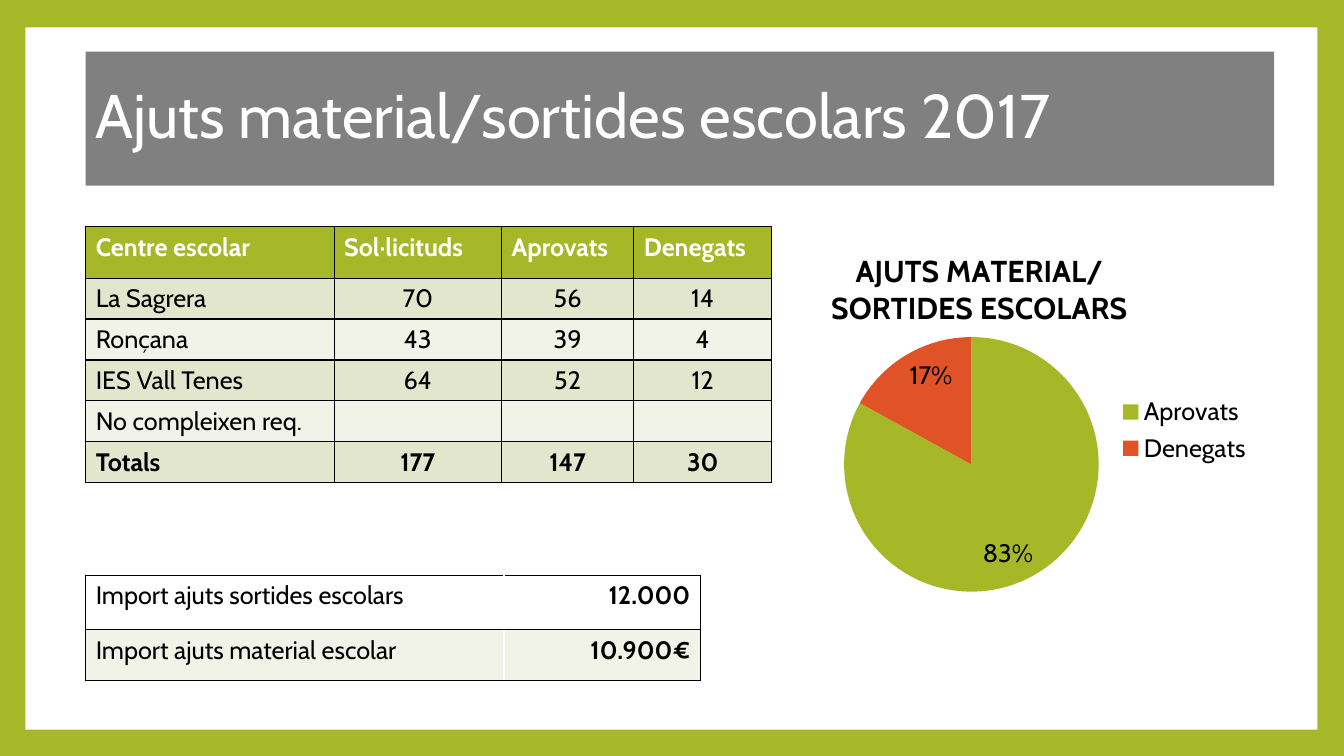
from lxml.etree import SubElement
from pptx import Presentation
from pptx.chart.data import CategoryChartData
from pptx.dml.color import RGBColor
from pptx.enum.chart import XL_CHART_TYPE, XL_LABEL_POSITION, XL_LEGEND_POSITION
from pptx.enum.shapes import MSO_SHAPE
from pptx.enum.text import MSO_ANCHOR, PP_ALIGN
from pptx.oxml import parse_xml
from pptx.oxml.ns import nsdecls, qn
from pptx.util import Cm, Pt

COLORS = {
    "green": "A6B727",
    "orange": "DF5327",
    "gray": "808080",
    "band": "E1E6CD",
    "light": "F1F3E8",
    "white": "FFFFFF",
    "black": "000000",
}


def rgb(name):
    return RGBColor.from_string(COLORS[name])


class SlideBuilder:
    font = "Cabin"

    def __init__(self, prs):
        self.slide = prs.slides.add_slide(prs.slide_layouts[6])

    def background(self, color):
        fill = self.slide.background.fill
        fill.solid()
        fill.fore_color.rgb = rgb(color)

    def style(self, font, color="black", size=18, bold=False):
        values = {"name": self.font, "size": Pt(size), "bold": bold}
        for key, value in values.items():
            setattr(font, key, value)
        font.color.rgb = rgb(color)

    def rect(self, box, color):
        sp = self.slide.shapes.add_shape(MSO_SHAPE.RECTANGLE, *map(Cm, box))
        sp.shadow.inherit = False
        sp.fill.solid()
        sp.fill.fore_color.rgb = rgb(color)
        sp.line.fill.background()
        return sp

    def banner(self, box, text):
        tf = self.rect(box, "gray").text_frame
        tf.word_wrap = True
        tf.vertical_anchor = MSO_ANCHOR.MIDDLE
        p = tf.paragraphs[0]
        p.alignment = PP_ALIGN.LEFT
        p.line_spacing = 0.9
        r = p.add_run()
        r.text = text
        self.style(r.font, "white", 44)

    def table(self, left, top, widths, heights):
        frame = self.slide.shapes.add_table(
            len(heights), len(widths), Cm(left), Cm(top),
            Cm(sum(widths)), Cm(sum(heights)))
        table = frame.table
        for column, width in zip(table.columns, widths):
            column.width = Cm(width)
        for row, height in zip(table.rows, heights):
            row.height = Cm(height)
        return table

    def cell(self, cell, text, fill, align=PP_ALIGN.LEFT, borders=("black",) * 4, **font):
        cell.fill.solid()
        cell.fill.fore_color.rgb = rgb(fill)
        p = cell.text_frame.paragraphs[0]
        p.alignment = align
        if text:
            r = p.add_run()
            r.text = text
            self.style(r.font, **font)
        tc_pr = cell._tc.get_or_add_tcPr()
        for i, (side, color) in enumerate(zip("LRTB", borders)):
            ln = parse_xml(f'<a:ln{side} {nsdecls("a")} w="12700"/>')
            solid = SubElement(ln, qn("a:solidFill"))
            SubElement(solid, qn("a:srgbClr"), val=COLORS[color])
            tc_pr.insert(i, ln)

    def layout(self, element, index, **values):
        for old in element.findall(qn("c:layout")):
            element.remove(old)
        layout = parse_xml(f'<c:layout {nsdecls("c")}/>')
        manual = SubElement(layout, qn("c:manualLayout"))
        if "w" in values and index == 0:
            SubElement(manual, qn("c:layoutTarget"), val="inner")
        for mode in ("xMode", "yMode"):
            SubElement(manual, qn(f"c:{mode}"), val="edge")
        for key, value in values.items():
            SubElement(manual, qn(f"c:{key}"), val=str(value))
        element.insert(index, layout)

    def pie(self, box, title, slices):
        data = CategoryChartData()
        data.categories = [name for name, _, _ in slices]
        data.add_series("Series 1", [value for _, value, _ in slices])
        chart = self.slide.shapes.add_chart(
            XL_CHART_TYPE.PIE, *map(Cm, box), data).chart
        self.style(chart.font)

        chart.has_title = True
        r = chart.chart_title.text_frame.paragraphs[0].add_run()
        r.text = title
        self.style(r.font, size=21.6, bold=True)

        chart.has_legend = True
        chart.legend.position = XL_LEGEND_POSITION.RIGHT
        chart.legend.include_in_layout = False
        self.style(chart.legend.font)

        plot = chart.plots[0]
        plot.vary_by_categories = True
        for i, (_, _, color) in enumerate(slices):
            fill = plot.series[0].points[i].format.fill
            fill.solid()
            fill.fore_color.rgb = rgb(color)
        plot.has_data_labels = True
        labels = plot.data_labels
        formats = {
            "show_percentage": True,
            "show_value": False,
            "number_format": "0%",
            "number_format_is_linked": False,
            "position": XL_LABEL_POSITION.INSIDE_END,
        }
        for key, value in formats.items():
            setattr(labels, key, value)
        self.style(labels.font)

        self.layout(chart.chart_title._element, 1, x=0.03, y=0.12)
        self.layout(chart.legend._element, 1, x=0.68, y=0.42, w=0.3, h=0.16)
        plot_area = chart._chartSpace.chart.plotArea
        self.layout(plot_area, 0, x=0.07, y=0.31, w=0.57, h=0.52)


def main():
    prs = Presentation()
    prs.slide_width, prs.slide_height = Cm(33.87), Cm(19.05)
    builder = SlideBuilder(prs)
    left = 2.16

    builder.background("green")
    builder.rect((0.64, 0.69, 32.56, 17.7), "white")
    builder.banner((left, 1.3, 29.95, 3.38), "Ajuts material/sortides escolars 2017")

    schools = [
        ("Centre escolar", "Sol·licituds", "Aprovats", "Denegats"),
        ("La Sagrera", "70", "56", "14"),
        ("Ronçana", "43", "39", "4"),
        ("IES Vall Tenes", "64", "52", "12"),
        ("No compleixen req.", "", "", ""),
        ("Totals", "177", "147", "30"),
    ]
    table = builder.table(left, 5.71, [6.26, 4.22, 3.33, 3.48], [1.3] + [1.03] * 5)
    for i, row in enumerate(schools):
        header = i == 0
        fill = "green" if header else "band" if i % 2 else "light"
        for j, text in enumerate(row):
            align = PP_ALIGN.LEFT if header or j == 0 else PP_ALIGN.CENTER
            builder.cell(table.cell(i, j), text, fill, align,
                         color="white" if header else "black",
                         bold=header or row[0] == "Totals")

    builder.pie((20.47, 4.67, 11.3, 12.34), "AJUTS MATERIAL/SORTIDES ESCOLARS",
                [("Aprovats", 83, "green"), ("Denegats", 17, "orange")])

    amounts = [
        ("Import ajuts sortides escolars", "12.000", "white"),
        ("Import ajuts material escolar", "10.900€", "light"),
    ]
    table = builder.table(left, 14.5, [10.54, 4.95], [1.37, 1.27])
    for i, (label, amount, fill) in enumerate(amounts):
        builder.cell(table.cell(i, 0), label, fill,
                     borders=("black", "white", "black", "black"))
        builder.cell(table.cell(i, 1), amount, fill, PP_ALIGN.RIGHT,
                     borders=("white", "black", "black", "black"), bold=True)

    prs.save("out.pptx")


if __name__ == "__main__":
    main()
